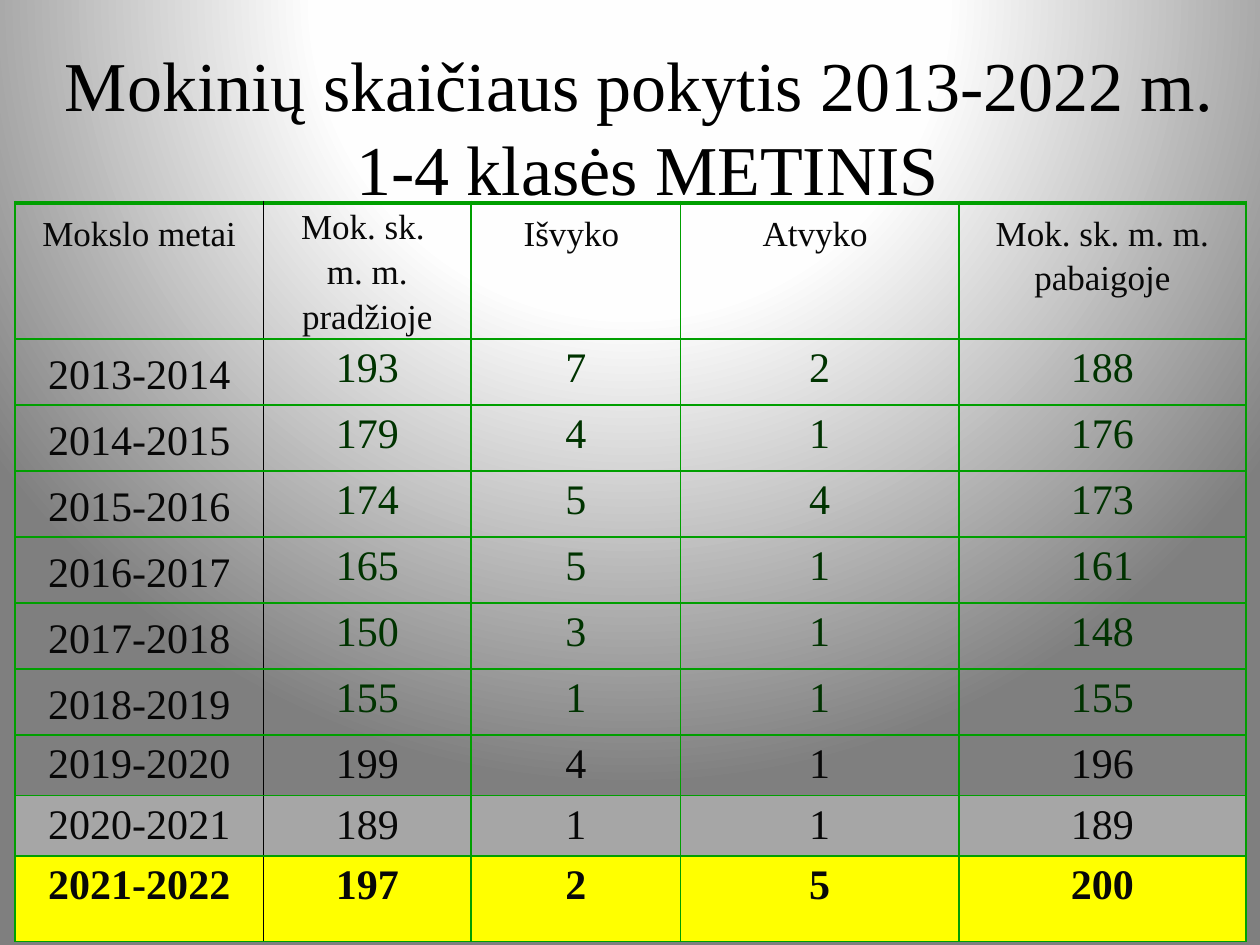
from dataclasses import dataclass

from pptx import Presentation
from pptx.dml.color import RGBColor
from pptx.enum.text import MSO_ANCHOR, PP_ALIGN
from pptx.oxml import parse_xml
from pptx.oxml.ns import nsdecls
from pptx.util import Inches, Pt

TITLE = "Mokinių skaičiaus pokytis 2013-2022 m. \v1-4 klasės METINIS"
HEADER = ["Mokslo metai", "Mok. sk. \nm. m. pradžioje", "Išvyko ", "Atvyko ",
          "Mok. sk. m. m. pabaigoje"]
YEARS = [
    ("2013-2014", 193, 7, 2, 188),
    ("2014-2015", 179, 4, 1, 176),
    ("2015-2016", 174, 5, 4, 173),
    ("2016-2017", 165, 5, 1, 161),
    ("2017-2018", 150, 3, 1, 148),
    ("2018-2019", 155, 1, 1, 155),
    ("2019-2020", 199, 4, 1, 196),
    ("2020-2021", 189, 1, 1, 189),
    ("2021-2022", 197, 2, 5, 200),
]
COLUMN_WIDTHS = [1.97, 1.65, 1.66, 2.21, 2.28]
ROW_HEIGHTS = [1.08] + [0.51] * 6 + [0.48] * 2 + [0.68]
LAST_GREEN_ROW = 6  # later years are dark and single spaced
ROW_FILLS = {8: "A6A6A6", 9: "FFFF00"}


@dataclass(frozen=True)
class Theme:
    font: str = "Times New Roman"
    title_size: int = 40
    header_size: int = 20
    body_size: int = 24
    black: str = "000000"
    ink: str = "080808"
    green: str = "003300"
    grid: str = "009F00"
    gradient: tuple = ((0, "FFFFFF"), (40, "FEFEFE"), (100, "7F7F7F"))


THEME = Theme()


def style(paragraph, size, color, bold=False):
    font = paragraph.font
    font.name, font.size, font.bold = THEME.font, Pt(size), bold
    font.color.rgb = RGBColor.from_string(color)
    paragraph.alignment = PP_ALIGN.CENTER


def set_background(slide):
    """Radial gradient centred above the top edge."""
    stops = "".join(f'<a:gs pos="{pos * 1000}"><a:srgbClr val="{color}"/></a:gs>'
                    for pos, color in THEME.gradient)
    slide.element.cSld.insert(0, parse_xml(
        f'<p:bg {nsdecls("p", "a")}><p:bgPr><a:gradFill rotWithShape="1">'
        f'<a:gsLst>{stops}</a:gsLst><a:path path="circle">'
        '<a:fillToRect l="50000" t="-80000" r="50000" b="180000"/></a:path>'
        '</a:gradFill><a:effectLst/></p:bgPr></p:bg>'))


def set_borders(cell, row, col):
    """Green grid, heavy on top, with a black rule after the first column."""
    sides = {
        "L": (THEME.black if col == 1 else THEME.grid, 1),
        "R": (THEME.black if col == 0 else THEME.grid, 1),
        "T": (THEME.grid, 3 if row == 0 else 1),
        "B": (THEME.grid, 1),
    }
    properties = cell._tc.get_or_add_tcPr()
    for index, (side, (color, width)) in enumerate(sides.items()):
        properties.insert(index, parse_xml(
            f'<a:ln{side} {nsdecls("a")} w="{Pt(width)}"><a:solidFill>'
            f'<a:srgbClr val="{color}"/></a:solidFill></a:ln{side}>'))


def set_margins(cell, row, col):
    if (row, col) == (0, 1):
        side, top = 0, 0
    else:
        side, top = (0.19 if row == 0 or col == 0 else 0.2), 0.05
    cell.margin_left = cell.margin_right = Inches(side)
    cell.margin_top = cell.margin_bottom = Inches(top)


def fill_cell(cell, value, row, col):
    cell.text = str(value)
    cell.vertical_anchor = MSO_ANCHOR.TOP
    set_margins(cell, row, col)
    early = row <= LAST_GREEN_ROW
    green = early and row > 0 and col > 0
    for paragraph in cell.text_frame.paragraphs:
        style(paragraph, THEME.body_size if row else THEME.header_size,
              THEME.green if green else THEME.ink, bold=row == len(YEARS))
        if early and not green:
            paragraph.line_spacing = 1.15
    if row in ROW_FILLS:
        cell.fill.solid()
        cell.fill.fore_color.rgb = RGBColor.from_string(ROW_FILLS[row])
    else:
        cell.fill.background()
    set_borders(cell, row, col)


def add_title(slide):
    title = slide.shapes.title
    title.left, title.top = Inches(0.28), Inches(0.13)
    title.width, title.height = Inches(9.72), Inches(1.73)
    title.text_frame.text = TITLE
    title.text_frame.vertical_anchor = MSO_ANCHOR.MIDDLE
    style(title.text_frame.paragraphs[0], THEME.title_size, THEME.black)


def add_pupil_table(slide):
    rows = [HEADER, *YEARS]
    table = slide.shapes.add_table(
        len(rows), len(HEADER), Inches(0.12), Inches(1.61),
        Inches(sum(COLUMN_WIDTHS)), Inches(sum(ROW_HEIGHTS))).table
    table.first_row = table.horz_banding = False
    for column, width in zip(table.columns, COLUMN_WIDTHS):
        column.width = Inches(width)
    for table_row, height in zip(table.rows, ROW_HEIGHTS):
        table_row.height = Inches(height)
    for r, values in enumerate(rows):
        for c, value in enumerate(values):
            fill_cell(table.cell(r, c), value, r, c)


def main():
    deck = Presentation()
    deck.slide_width, deck.slide_height = Inches(10), Inches(7.5)
    slide = deck.slides.add_slide(deck.slide_layouts[5])
    set_background(slide)
    add_title(slide)
    add_pupil_table(slide)
    deck.save("out.pptx")


if __name__ == "__main__":
    main()
